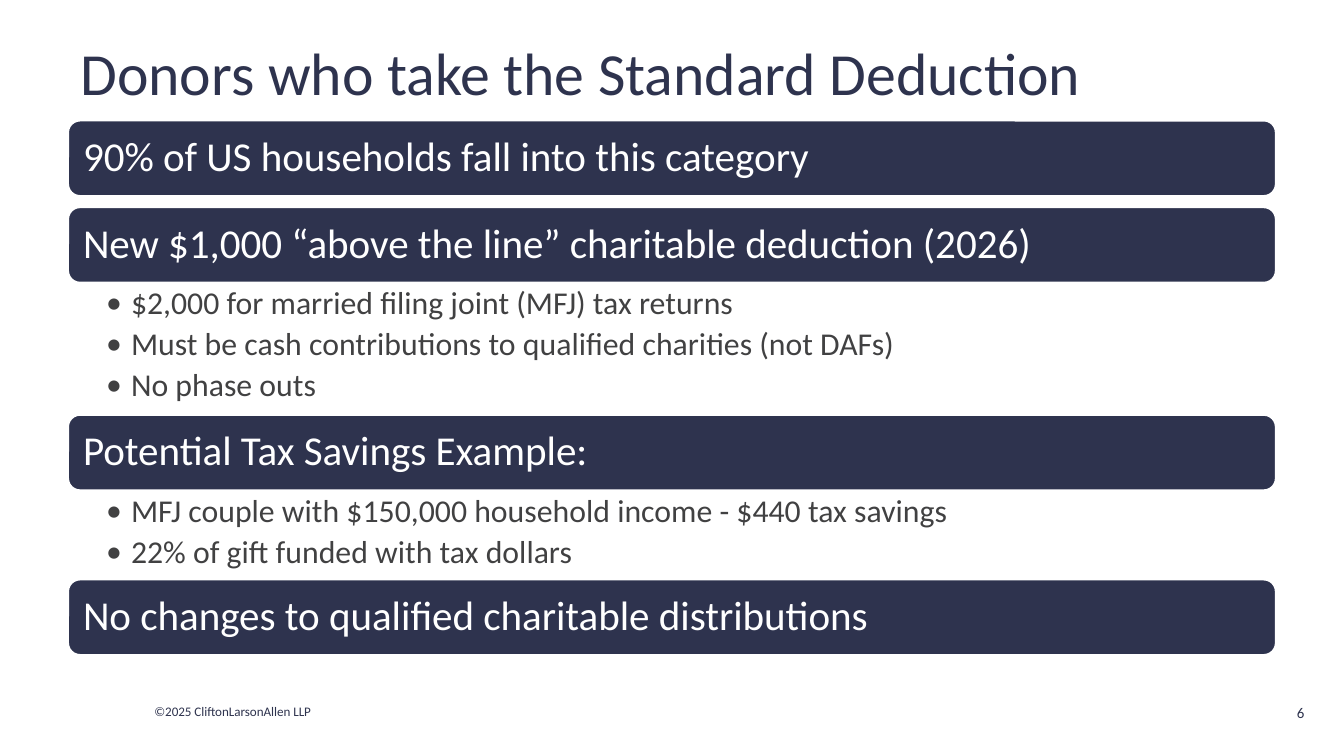
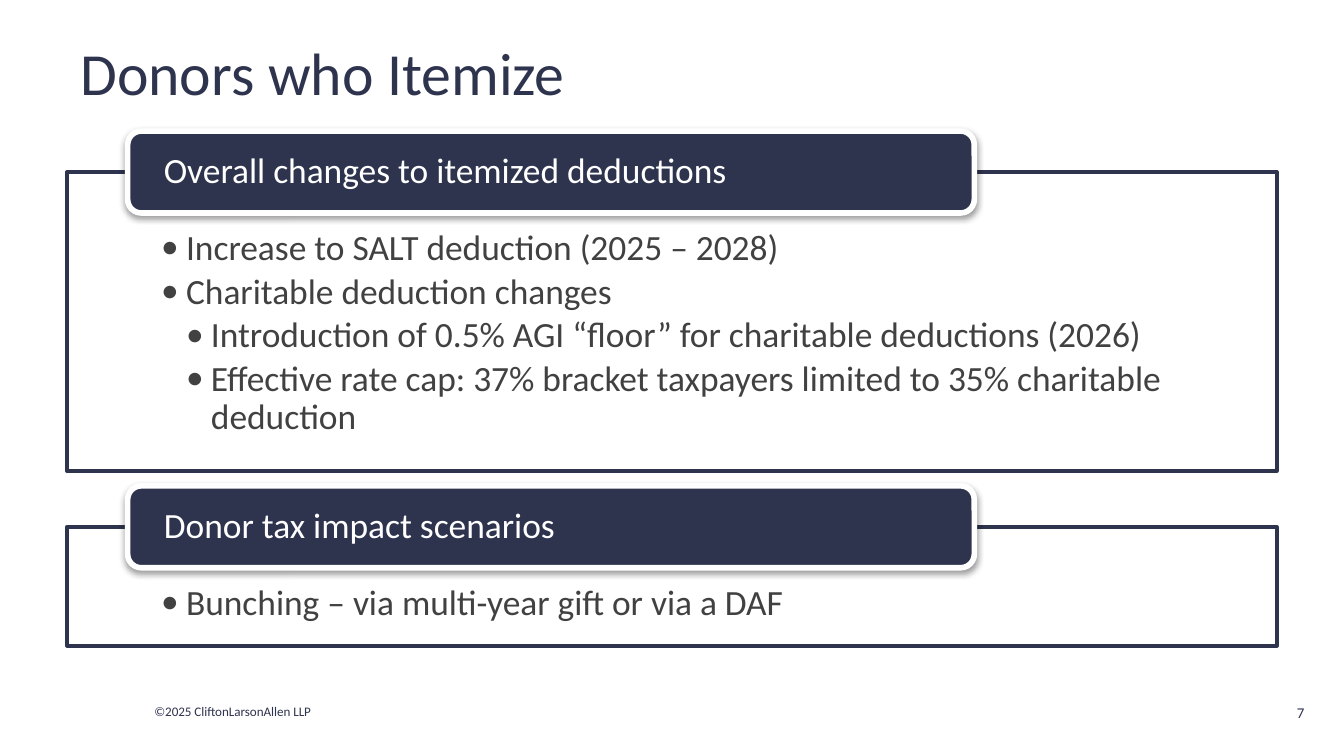
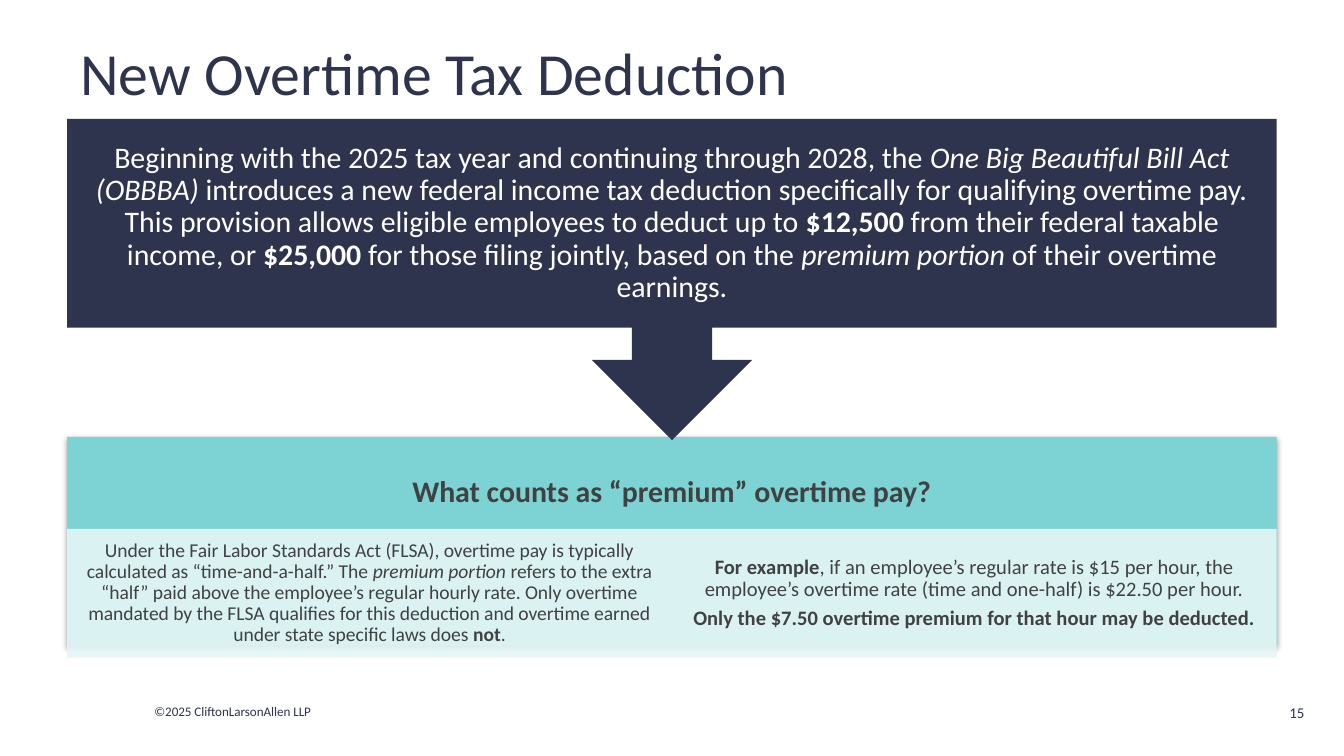
import dataclasses

import pptx
import pptx.dml.color
import pptx.enum.shapes
import pptx.enum.text
import pptx.oxml.ns
import pptx.util
from lxml import etree

FOOTER = "©2025 CliftonLarsonAllen LLP"

STANDARD = [
    ("90% of US households fall into this category", []),
    ("New $1,000 “above the line” charitable deduction (2026)", [
        "$2,000 for married filing joint (MFJ) tax returns",
        "Must be cash contributions to qualified charities (not DAFs)",
        "No phase outs",
    ]),
    ("Potential Tax Savings Example:", [
        "MFJ couple with $150,000 household income - $440 tax savings",
        "22% of gift funded with tax dollars",
    ]),
    ("No changes to qualified charitable distributions", []),
]

# Each panel: heading, height, then bullets as (level, text)
ITEMIZE = [
    ("Overall changes to itemized deductions", 445, [
        (1, "Increase to SALT deduction (2025 – 2028)"),
        (1, "Charitable deduction changes"),
        (2, "Introduction of 0.5% AGI “floor” for charitable deductions (2026)"),
        (2, "Effective rate cap: 37% bracket taxpayers limited to 35% "
            "charitable deduction"),
    ]),
    ("Donor tax impact scenarios", 177, [
        (1, "Bunching – via multi-year gift or via a DAF"),
    ]),
]

# Paragraphs are lists of runs; a run is text with "b", "i" or ""
OVERTIME = [
    ("Beginning with the 2025 tax year and continuing through 2028, the ", ""),
    ("One Big Beautiful Bill Act (OBBBA)", "i"),
    (" introduces a new federal income tax deduction specifically for "
     "qualifying overtime pay. This provision allows eligible employees to "
     "deduct up to ", ""),
    ("$12,500", "b"),
    (" from their federal taxable income, or ", ""),
    ("$25,000", "b"),
    (" for those filing jointly, based on the ", ""),
    ("premium portion", "i"),
    (" of their overtime earnings.", ""),
]
PREMIUM = [("What counts as “premium” overtime pay?", "b")]
DETAILS = [
    (10.5, [[
        ("Under the Fair Labor Standards Act (FLSA), overtime pay is typically "
         "calculated as “time-and-a-half.” The ", ""),
        ("premium portion", "i"),
        (" refers to the extra “half” paid above the employee’s regular hourly "
         "rate. Only overtime mandated by the FLSA qualifies for this deduction "
         "and overtime earned under state specific laws does ", ""),
        ("not", "b"),
        (".", ""),
    ]]),
    (11, [
        [("For example", "b"),
         (", if an employee’s regular rate is $15 per hour, the employee’s "
          "overtime rate (time and one-half) is $22.50 per hour.", "")],
        [("Only the $7.50 overtime premium for that hour may be deducted.", "b")],
    ]),
]


@dataclasses.dataclass(frozen=True)
class Theme:
    font: str = "Calibri"
    navy: str = "2E334E"
    white: str = "FFFFFF"
    grey: str = "414142"
    teal: str = "7DD2D3"
    pale: str = "E5F6F6"
    title: float = 32
    bar: float = 22
    item: float = 17
    panel: float = 19
    lead: float = 16
    foot: float = 7
    page: float = 8


THEME = Theme()
PX = 4572  # EMU in one px, 200 px to the inch
WIDE, HIGH = 2000, 1125
LEFT, SPAN = 100, 1800
INDENT = 37
KIND = pptx.enum.shapes.MSO_SHAPE
ALIGN = pptx.enum.text.PP_ALIGN
MID = pptx.enum.text.MSO_ANCHOR.MIDDLE
TOP = pptx.enum.text.MSO_ANCHOR.TOP
SIDES = ("margin_left", "margin_top", "margin_right", "margin_bottom")


def rgb(code):
    return pptx.dml.color.RGBColor.from_string(code)


def emu(*sizes):
    return [pptx.util.Emu(size * PX) for size in sizes]


def apply(target, values):
    for name, value in values.items():
        setattr(target, name, value)


def node(parent, tag, **attrs):
    return etree.SubElement(parent, pptx.oxml.ns.qn(tag), attrs)


def bullet(para, level):
    props = para._p.get_or_add_pPr()
    props.set("marL", str(level * INDENT * PX))
    props.set("indent", str(-INDENT * PX))
    node(props, "a:buFont", typeface=THEME.font)
    node(props, "a:buChar", char="•")
    para.level = level


def write(shape, paras, size, color, align=ALIGN.LEFT, anchor=MID,
          inset=(20, 10, 20, 10), line=0.9, after=0):
    """Fill a shape with (level, runs) paragraphs; level 0 has no bullet."""
    frame = shape.text_frame
    apply(frame, dict(zip(SIDES, emu(*inset)), word_wrap=True,
                      vertical_anchor=anchor))
    for index, (level, runs) in enumerate(paras):
        para = frame.add_paragraph() if index else frame.paragraphs[0]
        if level:
            bullet(para, level)
        apply(para, {"alignment": align, "line_spacing": line,
                     "space_before": pptx.util.Pt(0),
                     "space_after": pptx.util.Pt(after)})
        for text, style in runs:
            run = para.add_run()
            run.text = text
            apply(run.font, {"name": THEME.font, "size": pptx.util.Pt(size),
                             "bold": style == "b", "italic": style == "i"})
            run.font.color.rgb = rgb(color)


def plain(text, level=0):
    return level, [(text, "")]


def label(slide, box, paras, size, color, **format):
    write(slide.shapes.add_textbox(*emu(*box)), paras, size, color, **format)


def block(slide, kind, box, fill, line=None, width=2, alpha=None, shade=False):
    shape = slide.shapes.add_shape(kind, *emu(*box))
    shape.shadow.inherit = False
    shape.fill.solid()
    shape.fill.fore_color.rgb = rgb(fill)
    props = shape.element.spPr
    if alpha:
        color = props.find(".//" + pptx.oxml.ns.qn("a:srgbClr"))
        node(color, "a:alpha", val=str(alpha * 1000))
    if line:
        shape.line.color.rgb = rgb(line)
        shape.line.width = pptx.util.Pt(width)
    else:
        shape.line.fill.background()
    if shade:
        drop = node(props.find(pptx.oxml.ns.qn("a:effectLst")), "a:outerShdw",
                    blurRad="40000", dist="20000", dir="5400000", rotWithShape="0")
        node(node(drop, "a:srgbClr", val="000000"), "a:alpha", val="38000")
    return shape


def begin(deck, title, number):
    """Add a slide with its title, footer and page number."""
    slide = deck.slides.add_slide(deck.slide_layouts[6])
    for box, text, size, align in (
        ((210, 1037, 302, 44), FOOTER, THEME.foot, ALIGN.LEFT),
        ((LEFT, 31, SPAN, 150), title, THEME.title, ALIGN.LEFT),
        ((1875, 1022, 86, 76), str(number), THEME.page, ALIGN.RIGHT),
    ):
        label(slide, box, [plain(text)], size, THEME.navy, align=align, line=1)
    return slide


def standard(slide):
    top, bar, gap, row = 178, 115, 14, 64
    for head, items in STANDARD:
        shape = block(slide, KIND.ROUNDED_RECTANGLE, (LEFT, top, SPAN, bar),
                      THEME.navy, THEME.white)
        write(shape, [plain(head)], THEME.bar, THEME.white,
              inset=(18, 18, 18, 18))
        top += bar
        if items:
            size = len(items) * row + 2
            label(slide, (LEFT, top, SPAN, size),
                  [plain(item, 1) for item in items], THEME.item, THEME.grey,
                  anchor=TOP, inset=(58, 6, 34, 6), after=3.5)
            top += size
        else:
            top += gap


def itemize(slide):
    top, gap, tab, rise = 256, 83, 122, 61
    for head, size, items in ITEMIZE:
        frame = block(slide, KIND.RECTANGLE, (LEFT, top, SPAN, size),
                      THEME.white, THEME.navy, alpha=90)
        write(frame, [plain(text, level) for level, text in items],
              THEME.panel, THEME.grey, anchor=TOP, inset=(140, 86, 140, 30),
              after=2.85)
        shape = block(slide, KIND.ROUNDED_RECTANGLE,
                      (190, top - rise, 1260, tab),
                      THEME.navy, THEME.white, width=3, shade=True)
        write(shape, [plain(head)], THEME.panel, THEME.white,
              inset=(48, 0, 48, 0))
        top += size + gap


def overtime(slide):
    center = {"align": ALIGN.CENTER}
    base = block(slide, KIND.RECTANGLE, (LEFT, 650, SPAN, 310), THEME.teal,
                 shade=True)
    write(base, [(0, PREMIUM)], THEME.lead, THEME.grey,
          inset=(24, 24, 24, 166), **center)
    half = SPAN // len(DETAILS)
    for index, (size, paras) in enumerate(DETAILS):
        cell = block(slide, KIND.RECTANGLE,
                     (LEFT + index * half, 787, half, 192), THEME.pale, alpha=90)
        write(cell, [(0, runs) for runs in paras], size, THEME.grey,
              inset=(18, 4, 18, 4), after=3.5, **center)
    arrow = block(slide, KIND.DOWN_ARROW_CALLOUT, (LEFT, 177, SPAN, 478),
                  THEME.navy)
    write(arrow, [(0, OVERTIME)], THEME.lead, THEME.white,
          inset=(24, 24, 24, 24), **center)


def main():
    deck = pptx.Presentation()
    deck.slide_width, deck.slide_height = emu(WIDE, HIGH)
    for title, number, draw in (
        ("Donors who take the Standard Deduction", 6, standard),
        ("Donors who Itemize", 7, itemize),
        ("New Overtime Tax Deduction", 15, overtime),
    ):
        draw(begin(deck, title, number))
    deck.save("out.pptx")


if __name__ == "__main__":
    main()
